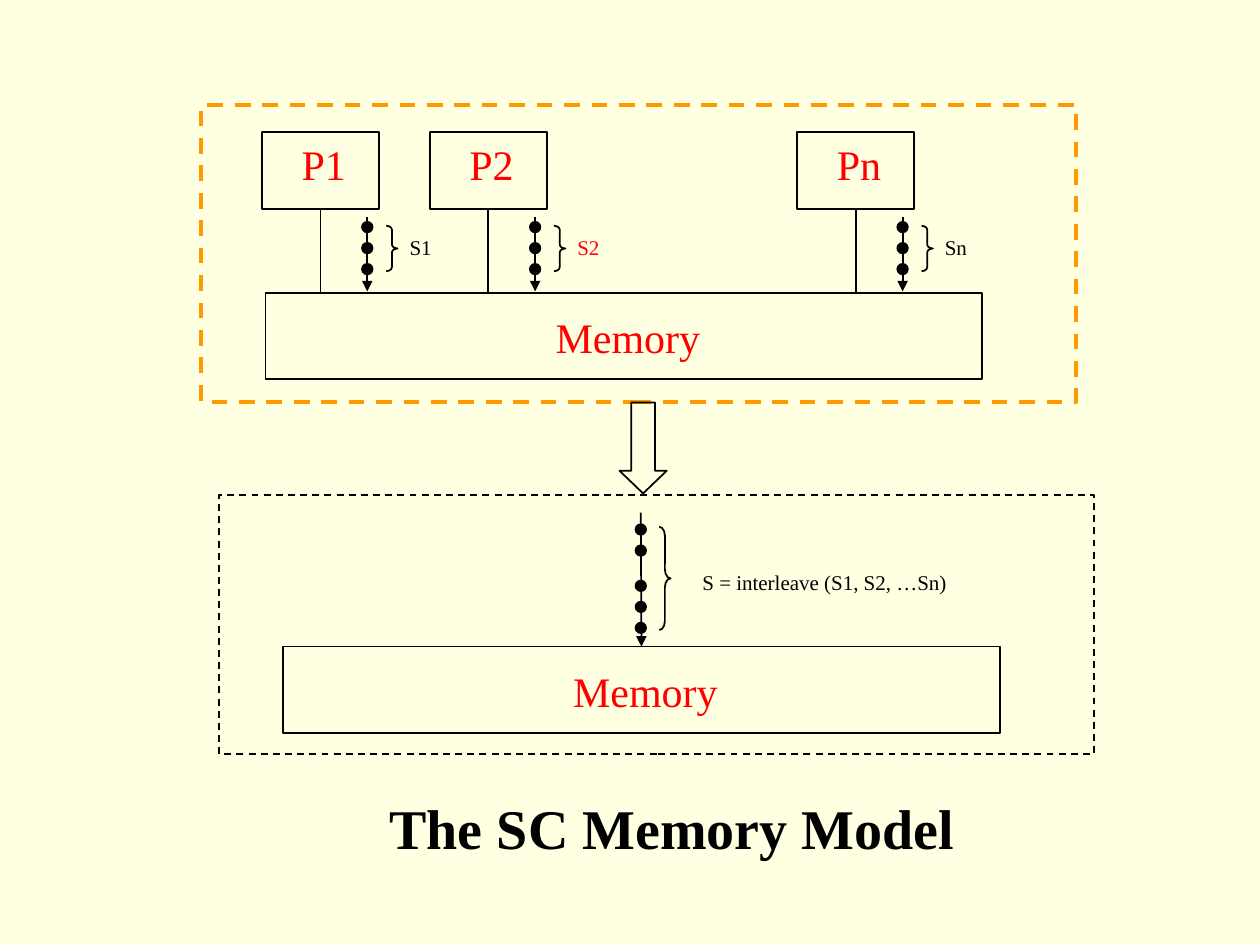
"""Build the slide about the SC memory model."""
from lxml import etree
from pptx import Presentation
from pptx import util as u
from pptx.dml.color import RGBColor
from pptx.enum import dml, shapes, text
from pptx.oxml.ns import qn

Pt = u.Pt
KIND = shapes.MSO_SHAPE
COLORS = {"paper": "FFFFE1", "ink": "000000", "accent": "FF0000", "frame": "FF9900"}
COLORS = {name: RGBColor.from_string(value) for name, value in COLORS.items()}
DOT = 6


def add_outline(parent, kind, left, top, width, height, color="ink", weight=1):
    shape = parent.add_shape(kind, Pt(left), Pt(top), Pt(width), Pt(height))
    shape.shadow.inherit = False
    shape.fill.background()
    shape.line.color.rgb = COLORS[color]
    shape.line.width = Pt(weight)
    return shape


def write_label(box, words, size, color, bold=False):
    frame = box.text_frame
    frame.word_wrap = False
    frame.auto_size = text.MSO_AUTO_SIZE.NONE
    frame.vertical_anchor = text.MSO_ANCHOR.TOP
    frame.text = words
    para = frame.paragraphs[0]
    para.alignment = text.PP_ALIGN.CENTER
    para.font.name = "Times New Roman"
    para.font.size = Pt(size)
    para.font.bold = bold
    para.font.color.rgb = COLORS[color]


deck = Presentation()
deck.slide_width, deck.slide_height = Pt(720), Pt(540)
page = deck.slides.add_slide(deck.slide_layouts[5])
page.background.fill.solid()
page.background.fill.fore_color.rgb = COLORS["paper"]

title = page.shapes.title
title.left, title.top, title.width, title.height = Pt(203.6), Pt(450), Pt(361), Pt(46)
write_label(title, "The SC Memory Model", 32, "ink", bold=True)

memories = []
for left, top in [(151.8, 167.3), (161.8, 369.5)]:
    memories.append(add_outline(page.shapes, KIND.RECTANGLE, left, top, 409.5, 49.5))
    box = page.shapes.add_textbox(Pt(left + 158), Pt(top + 7), Pt(98), Pt(36))
    write_label(box, "Memory", 24, "accent")

for left, top, height, color, weight in [
    (115, 60, 169.7, "frame", 2.25),
    (125.2, 282.8, 148.2, "ink", 1),
]:
    border = add_outline(page.shapes, KIND.RECTANGLE, left, top, 500, height, color, weight)
    border.line.dash_style = dml.MSO_LINE.DASH

lines, arrows, dots = [], [], []
for suffix, left, color in [("1", 149.7, "ink"), ("2", 245.6, "accent"), ("n", 455.6, "ink")]:
    group = page.shapes.add_group_shape().shapes
    processor = add_outline(group, KIND.RECTANGLE, left, 75.5, 66.8, 43.8)
    box = group.add_textbox(Pt(left + 15.3), Pt(75.5), Pt(40), Pt(36.5))
    write_label(box, "P" + suffix, 24, "accent")

    middle = left + 33.4
    wire = group.add_connector(shapes.MSO_CONNECTOR.STRAIGHT, Pt(middle), Pt(119.3), Pt(middle), Pt(167.3))
    wire.begin_connect(processor, 2)
    lines.append(wire)

    stream = left + 60.2
    arrows.append(group.add_connector(shapes.MSO_CONNECTOR.STRAIGHT, Pt(stream), Pt(124), Pt(stream), Pt(166.5)))
    for step in range(3):
        dots.append(add_outline(group, KIND.OVAL, stream - DOT / 2, 126.8 + 12 * step, DOT, DOT))
    brace = add_outline(group, KIND.RIGHT_BRACE, left + 71, 129, 6.5, 26)
    brace.adjustments[0] = 0.35
    box = group.add_textbox(Pt(left + 76.9), Pt(130.3), Pt(27.5), Pt(21.6))
    write_label(box, "S" + suffix, 12, color)

merged = page.shapes.add_connector(shapes.MSO_CONNECTOR.STRAIGHT, Pt(366.2), Pt(293), Pt(366.2), Pt(369.5))
merged.end_connect(memories[1], 0)
arrows.append(merged)
for top in [299.6, 311.6, 331.8, 343.8, 355.8]:
    dots.append(add_outline(page.shapes, KIND.OVAL, 366.2 - DOT / 2, top, DOT, DOT))
brace = add_outline(page.shapes, KIND.RIGHT_BRACE, 376.7, 301, 6.5, 59)
brace.adjustments[0] = 0.79
box = page.shapes.add_textbox(Pt(393.5), Pt(321.8), Pt(155.5), Pt(21.6))
write_label(box, "S = interleave (S1, S2, …Sn)", 12, "ink")

block_arrow = add_outline(page.shapes, KIND.DOWN_ARROW, 354, 230, 27, 52)
block_arrow.adjustments[1] = 0.48

for dot in dots:
    dot.fill.solid()
    dot.fill.fore_color.rgb = COLORS["ink"]

for line in lines + arrows:
    line.line.color.rgb = COLORS["ink"]
    line.line.width = Pt(1)
    etree.SubElement(line._element.spPr, qn("a:effectLst"))

for arrow in arrows:
    etree.SubElement(arrow.line._get_or_add_ln(), qn("a:tailEnd"), type="triangle")

deck.save("out.pptx")
